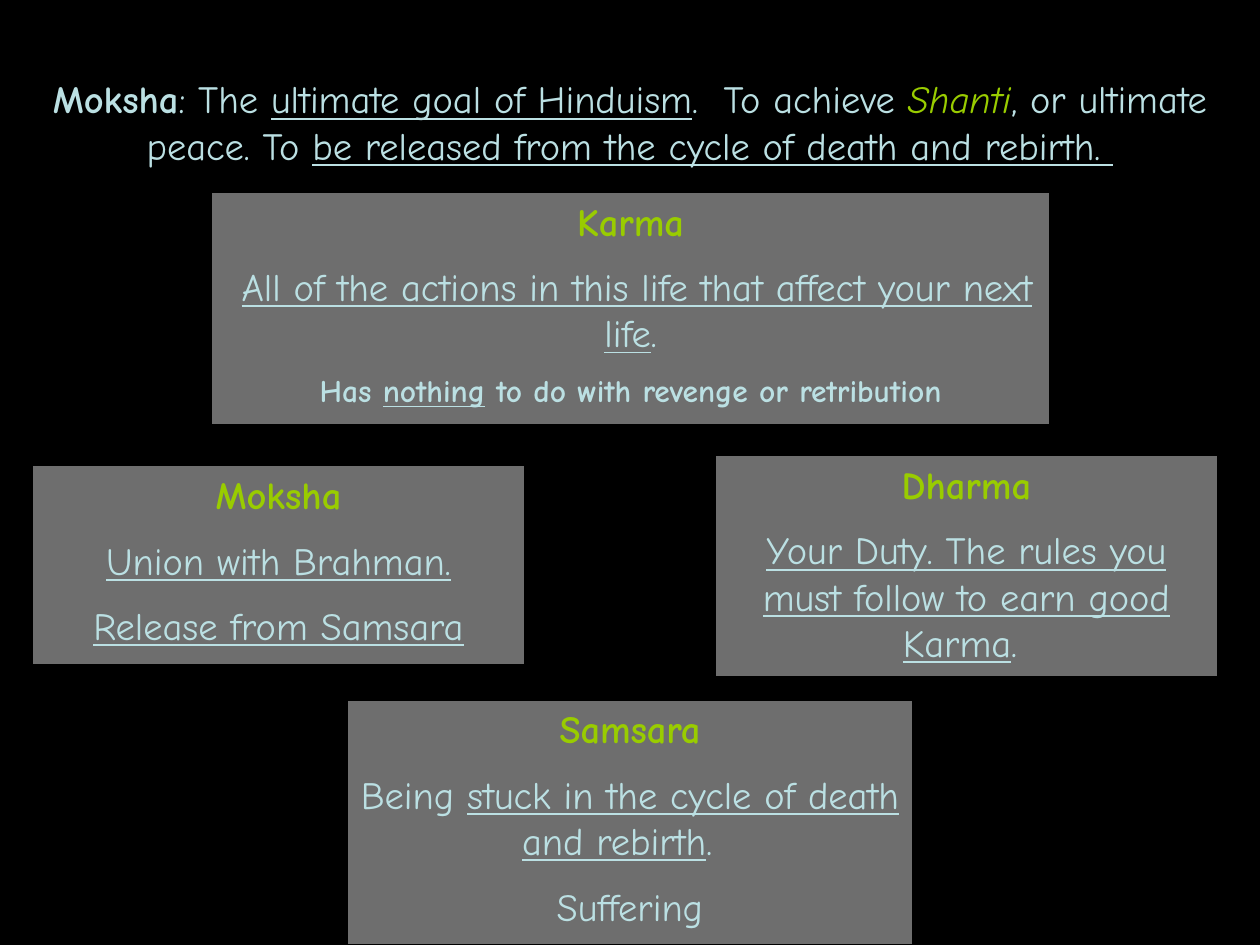
from pptx import Presentation
from pptx.dml.color import RGBColor
from pptx.enum.shapes import MSO_SHAPE
from pptx.enum.text import MSO_ANCHOR, PP_ALIGN
from pptx.oxml.ns import qn
from pptx.util import Inches, Pt
from lxml import etree

RECT = MSO_SHAPE.RECTANGLE
TOP = MSO_ANCHOR.TOP
CENTER = PP_ALIGN.CENTER

FONT = "Comic Neue"
PALE, GREEN, WHITE, BLACK = "BBE0E3", "99CC00", "FFFFFF", "000000"
SIZE, SMALL = 22, 18

# A run is its text and its style letters: b bold, i italic, u underline, g green
INTRO = [
    ("Moksha", "b"), (": The ", ""), ("ultimate goal of Hinduism", "u"),
    (".  To achieve ", ""), ("Shanti", "gi"), (", or ultimate peace. To ", ""),
    ("be released from the cycle of death and rebirth. ", "u"),
]

# Place, title, then paragraphs as (size, runs)
CARDS = [
    ((1.67, 1.52, 6.67, 1.86), "Karma", [
        (SIZE, [(" ", ""),
                ("All of the actions in this life that affect your next life", "u"),
                (".", "")]),
        (SMALL, [("Has ", "b"), ("nothing", "bu"),
                 (" to do with revenge or retribution", "b")]),
    ]),
    ((5.67, 3.61, 4, 1.77), "Dharma", [
        (SIZE, [("Your Duty. The rules you must follow to earn good Karma", "u"),
                (". ", "")]),
    ]),
    ((2.75, 5.55, 4.5, 1.95), "Samsara", [
        (SIZE, [("Being ", ""), ("stuck in the cycle of death and rebirth", "u"),
                (".  ", "")]),
        (SIZE, [("Suffering", "")]),
    ]),
    ((0.25, 3.69, 3.92, 1.59), "Moksha", [
        (SIZE, [("Union with Brahman.", "u")]),
        (SIZE, [("Release from Samsara", "u")]),
    ]),
]


def color(code):
    return RGBColor.from_string(code)


def add_run(para, text, style, size):
    run = para.add_run()
    run.text = text
    font = run.font
    font.name, font.size = FONT, Pt(size)
    font.bold, font.italic = "b" in style, "i" in style
    font.underline = "u" in style
    font.color.rgb = color(GREEN if "g" in style else PALE)


def fill_text(frame, paras):
    """Write centred paragraphs, each after the first half its size apart."""
    frame.word_wrap = True
    frame.vertical_anchor = TOP
    for index, (size, runs) in enumerate(paras):
        para = frame.add_paragraph() if index else frame.paragraphs[0]
        para.alignment = CENTER
        if index:
            para.space_before = Pt(size / 2)
        for text, style in runs:
            add_run(para, text, style, size)


def set_alpha(shape, percent):
    tint = shape.fill._xPr.find(qn("a:solidFill"))[0]
    etree.SubElement(tint, qn("a:alpha")).set("val", str(percent * 1000))


def add_card(slide, place, title, paras):
    card = slide.shapes.add_shape(RECT, *map(Inches, place))
    card.shadow.inherit = False
    card.fill.solid()
    card.fill.fore_color.rgb = color(WHITE)
    set_alpha(card, 43)
    card.line.color.rgb = color(BLACK)
    card.line.width = Pt(1.5)
    fill_text(card.text_frame, [(SIZE, [(title, "gb")]), *paras])


def add_intro(slide):
    box = slide.shapes.add_textbox(Inches(0), Inches(0.55), Inches(10), Inches(1.57))
    fill_text(box.text_frame, [(SIZE, INTRO)])


def main():
    deck = Presentation()
    deck.slide_width, deck.slide_height = Inches(10), Inches(7.5)
    slide = deck.slides.add_slide(deck.slide_layouts[6])
    back = slide.background.fill
    back.solid()
    back.fore_color.rgb = color(BLACK)
    add_intro(slide)
    for place, title, paras in CARDS:
        add_card(slide, place, title, paras)
    deck.save("out.pptx")


if __name__ == "__main__":
    main()
